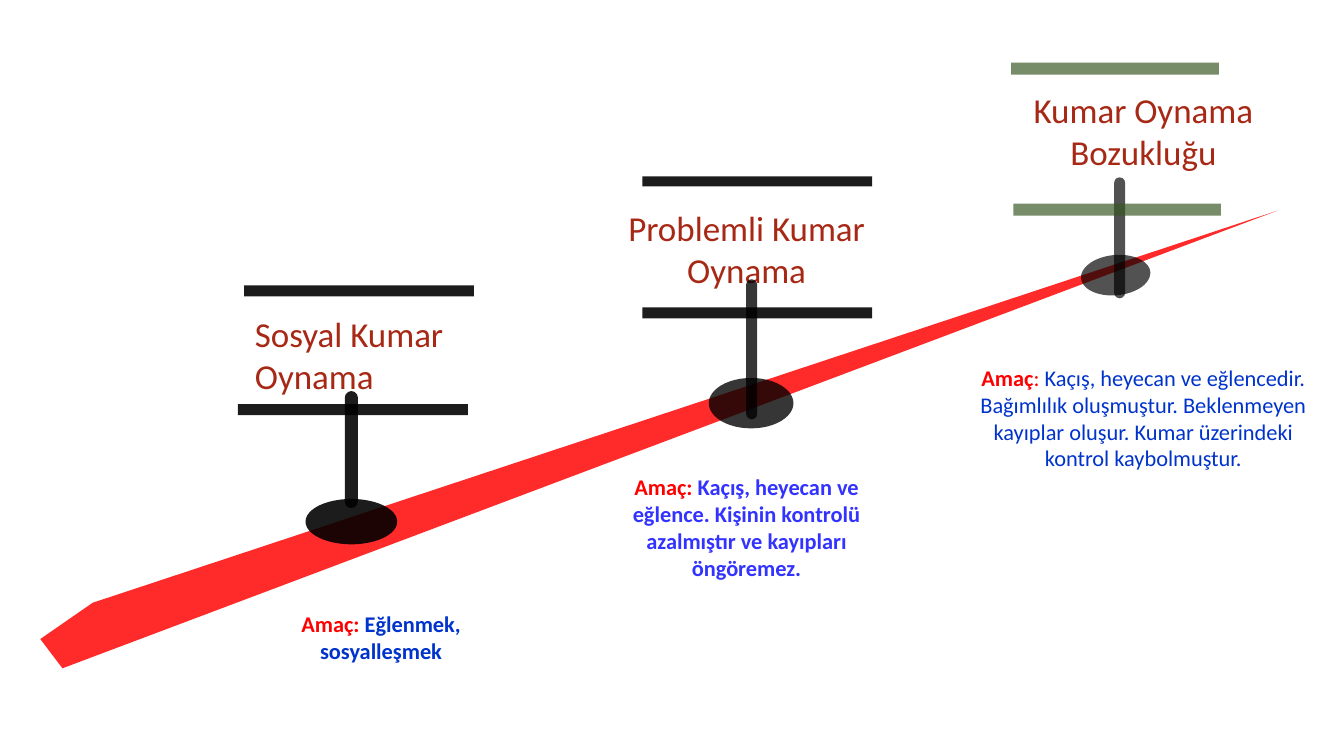
from lxml import etree
from pptx import Presentation
from pptx.dml.color import RGBColor
from pptx.enum.shapes import MSO_SHAPE
from pptx.enum.text import MSO_AUTO_SIZE, PP_ALIGN
from pptx.oxml.ns import qn
from pptx.util import Inches, Pt

ELLIPSE = MSO_SHAPE.OVAL
PILL = MSO_SHAPE.ROUNDED_RECTANGLE
BAR = MSO_SHAPE.RECTANGLE
LEFT, CENTER = PP_ALIGN.LEFT, PP_ALIGN.CENTER
GROW = MSO_AUTO_SIZE.SHAPE_TO_FIT_TEXT

RED = RGBColor(0xFF, 0x00, 0x00)
BLACK = RGBColor(0x00, 0x00, 0x00)
GREEN = RGBColor(0x38, 0x57, 0x23)
RUST = RGBColor(0xA7, 0x29, 0x15)
BLUE = RGBColor(0x00, 0x33, 0xCC)
VIOLET = RGBColor(0x33, 0x33, 0xFF)

FONT = "Calibri"
TITLE_SIZE, GOAL_SIZE = Pt(25), Pt(16)

ROAD_OUTLINE = [(0.4, 6.34), (0.92, 5.98), (12.67, 2.09), (0.62, 6.63)]

# Box, title, title alignment, gap in points, goal paragraphs of (text, colour, bold)
STAGE_TEXTS = [
    ((2.43, 3.05, 2.7, 3.56), "Sosyal Kumar Oynama", LEFT, 152.6,
     [[("Amaç: ", RED, True), ("Eğlenmek, sosyalleşmek", BLUE, True)]]),
    ((5.88, 2, 3.05, 4.2), "Problemli Kumar Oynama", CENTER, 130.6,
     [[("Amaç: ", RED, True),
       ("Kaçış, heyecan ve eğlence. Kişinin kontrolü azalmıştır ve kayıpları "
        "öngöremez.", VIOLET, True)]]),
    ((9.53, 0.83, 3.62, 4.12), "Kumar Oynama Bozukluğu", CENTER, 136.7,
     [[("Amaç", RED, True), (": ", RED, False),
       ("Kaçış, heyecan ve eğlencedir.", BLUE, False)],
      [("Bağımlılık oluşmuştur. Beklenmeyen kayıplar oluşur. Kumar üzerindeki "
        "kontrol kaybolmuştur.", BLUE, False)]]),
]

# Box, rotation, opacity in percent
SIGN_BASES = [
    ((3.03, 4.95, 0.91, 0.45), 0, 89),
    ((7.03, 3.75, 0.84, 0.5), 0, 79),
    ((10.72, 2.53, 0.69, 0.4), -5.4, 68),
]
# Box, opacity in percent
SIGN_POSTS = [
    ((3.42, 3.88, 0.13, 1.16), 89),
    ((7.4, 2.77, 0.11, 1.39), 79),
    ((11.05, 1.76, 0.11, 1.2), 68),
]
# Box, colour, opacity in percent
SIGN_BARS = [
    ((10.05, 2.02, 2.06, 0.12), GREEN, 68),
    ((10.03, 0.62, 2.06, 0.12), GREEN, 68),
    ((2.36, 4.01, 2.28, 0.11), BLACK, 89),
    ((2.42, 2.83, 2.28, 0.11), BLACK, 89),
    ((6.37, 1.75, 2.28, 0.1), BLACK, 89),
    ((6.37, 3.05, 2.28, 0.11), BLACK, 89),
]


def paint(shape, color, opacity):
    """Give a flat, borderless fill with an opacity in percent."""
    shape.shadow.inherit = False
    shape.line.fill.background()
    shape.fill.solid()
    shape.fill.fore_color.rgb = color
    color_xml = shape._element.spPr.find(qn("a:solidFill"))[0]
    etree.SubElement(color_xml, qn("a:alpha")).set("val", str(opacity * 1000))


def add_road(slide):
    points = [(Inches(x), Inches(y)) for x, y in ROAD_OUTLINE]
    builder = slide.shapes.build_freeform(*points[0])
    builder.add_line_segments(points[1:], close=True)
    paint(builder.convert_to_shape(), RED, 83)


def add_sign_part(slide, kind, box, color, opacity):
    part = slide.shapes.add_shape(kind, *map(Inches, box))
    paint(part, color, opacity)
    return part


def add_run(paragraph, text, size, color, bold=False):
    run = paragraph.add_run()
    run.text = text
    run.font.name = FONT
    run.font.size = size
    run.font.bold = bold
    run.font.color.rgb = color


def add_stage_text(slide, box, title, title_align, gap, goals):
    """Stage title above the road and its goal below, parted by a gap."""
    frame = slide.shapes.add_textbox(*map(Inches, box)).text_frame
    frame.word_wrap = True
    frame.auto_size = GROW
    heading = frame.paragraphs[0]
    heading.alignment = title_align
    add_run(heading, title, TITLE_SIZE, RUST)
    for index, goal in enumerate(goals):
        paragraph = frame.add_paragraph()
        paragraph.alignment = CENTER
        paragraph.space_before = Pt(0 if index else gap)
        for text, color, bold in goal:
            add_run(paragraph, text, GOAL_SIZE, color, bold)


def main():
    presentation = Presentation()
    presentation.slide_width = Inches(13.33)
    presentation.slide_height = Inches(7.5)
    slide = presentation.slides.add_slide(presentation.slide_layouts[6])

    add_road(slide)
    for stage in STAGE_TEXTS:
        add_stage_text(slide, *stage)
    for box, rotation, opacity in SIGN_BASES:
        add_sign_part(slide, ELLIPSE, box, BLACK, opacity).rotation = rotation
    for box, opacity in SIGN_POSTS:
        add_sign_part(slide, PILL, box, BLACK, opacity).adjustments[0] = 0.5
    for box, color, opacity in SIGN_BARS:
        add_sign_part(slide, BAR, box, color, opacity)

    presentation.save("out.pptx")


if __name__ == "__main__":
    main()
